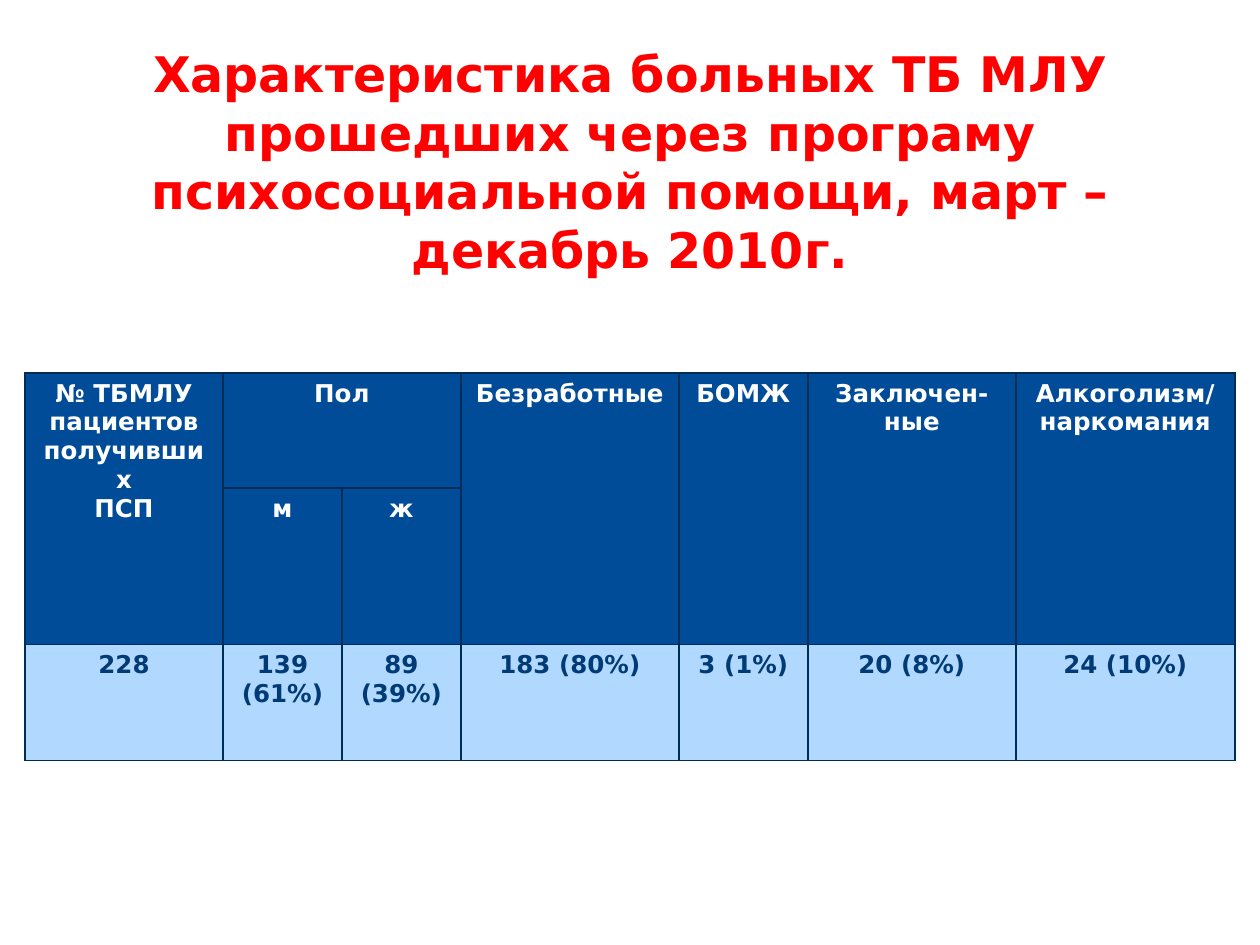
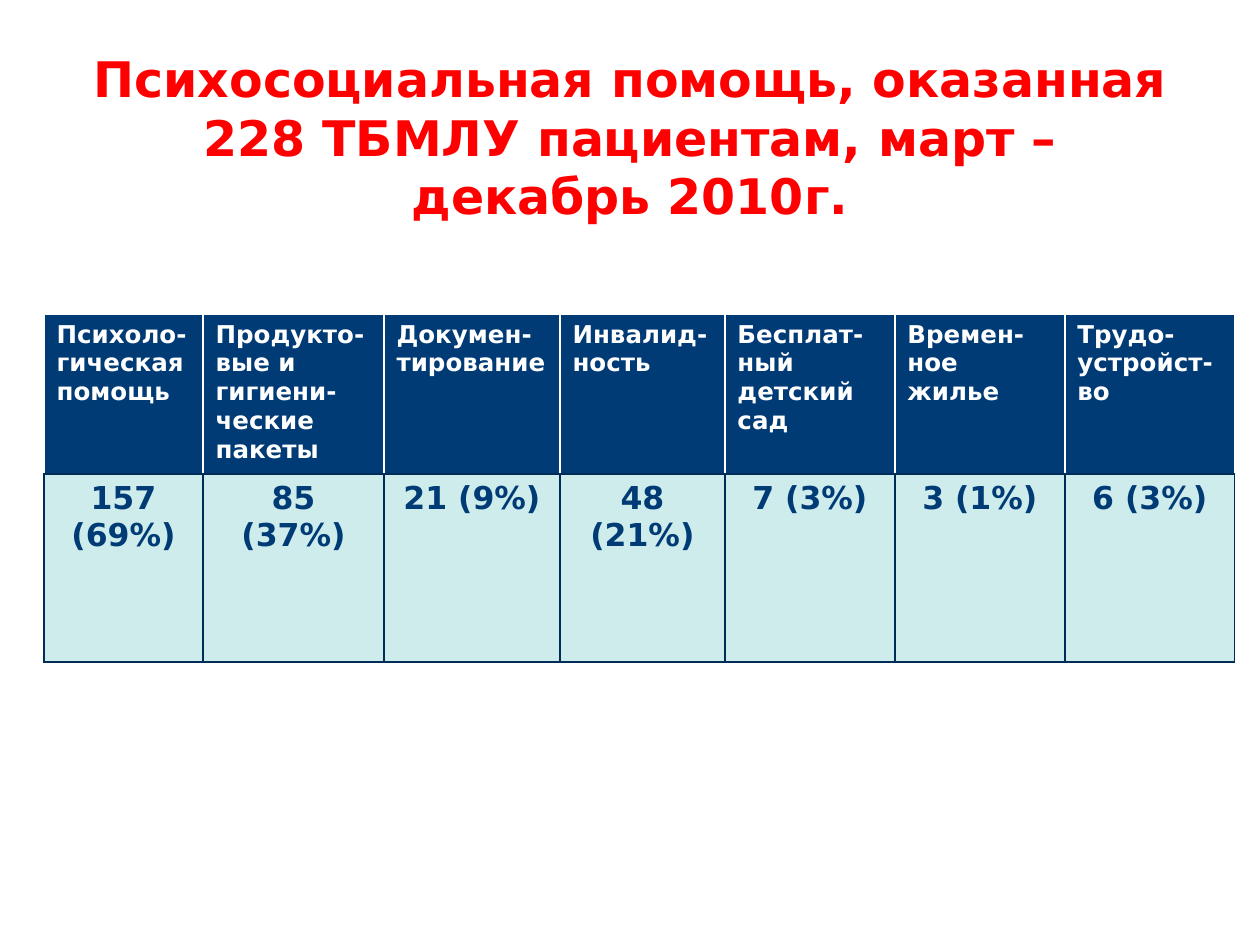
"""Build two slides with tables on psychosocial help for TB patients."""
from dataclasses import dataclass
from typing import NamedTuple

from lxml import etree
from pptx import Presentation
from pptx import util as u
from pptx.dml.color import RGBColor
from pptx.enum import text as tx
from pptx.oxml import ns

FONT = "DejaVu Sans"
RED = RGBColor(0xFF, 0x00, 0x00)
WHITE = RGBColor(0xFF, 0xFF, 0xFF)
NAVY = RGBColor(0x00, 0x3B, 0x76)
BLUE = RGBColor(0x00, 0x4C, 0x99)
SKY = RGBColor(0xB1, 0xD8, 0xFF)
MINT = RGBColor(0xCE, 0xEC, 0xEC)
EDGE = RGBColor(0x00, 0x2C, 0x58)
MID = tx.PP_ALIGN.CENTER
LEFT = tx.PP_ALIGN.LEFT
SIDES = ("lnL", "lnR", "lnT", "lnB")


class Look(NamedTuple):
    """Style of the cells in one row."""
    fill: RGBColor
    ink: RGBColor
    size: int
    align: tx.PP_ALIGN
    edges: tuple[RGBColor, ...]


class Span(NamedTuple):
    """First and last cell of a merged block."""
    row: int
    col: int
    last_row: int
    last_col: int


@dataclass
class Grid:
    """One slide: its title and its table."""
    title: str
    tall: int
    left: int
    top: int
    cols: list[int]
    rows: list[int]
    looks: list[Look]
    cells: list[list[str]]
    spans: list[Span]


DARK = (EDGE,) * 4
PALE = (WHITE, WHITE, WHITE, EDGE)
HEAD = Look(BLUE, WHITE, 14, MID, DARK)

GRIDS = [
    Grid(
        "Характеристика больных ТБ МЛУ прошедших через програму "
        "психосоциальной помощи, март – декабрь 2010г.",
        246, 25, 373,
        [198, 119, 119, 218, 129, 208, 219],
        [115, 97, 116],
        [HEAD, HEAD, Look(SKY, NAVY, 14, MID, DARK)],
        [
            ["№ ТБМЛУ пациентов получивших\nПСП", "Пол", "", "Безработные",
             "БОМЖ", "Заключен- ные", "Алкоголизм/\nнаркомания"],
            ["", "м", "ж", "", "", "", ""],
            ["228", "139 (61%)", "89 (39%)", "183 (80%)",
             "3 (1%)", "20 (8%)", "24 (10%)"],
        ],
        [Span(0, 1, 0, 2)] + [Span(0, c, 1, c) for c in (0, 3, 4, 5, 6)],
    ),
    Grid(
        "Психосоциальная помощь, оказанная 228 ТБМЛУ пациентам, "
        "март – декабрь 2010г.",
        197, 44, 314,
        [159, 181, 176, 165, 170, 170, 170],
        [160, 188],
        [Look(NAVY, WHITE, 14, LEFT, PALE), Look(MINT, NAVY, 18, MID, DARK)],
        [
            ["Психоло-гическая помощь", "Продукто-вые и гигиени-ческие пакеты",
             "Докумен-тирование", "Инвалид-ность", "Бесплат-ный детский сад",
             "Времен-ное жилье", "Трудо-устройст-во"],
            ["157 (69%)", "85 (37%)", "21 (9%)", "48 (21%)",
             "7 (3%)", "3 (1%)", "6 (3%)"],
        ],
        [],
    ),
]


def px(num: int) -> u.Emu:
    """Turn px into EMU."""
    return u.Emu(round(num * 914400 / 126))


def write(frame, words: str, size: int, ink: RGBColor, align) -> None:
    """Put bold text into a frame."""
    frame.text = words
    for para in frame.paragraphs:
        para.alignment = align
        for run in para.runs:
            font = run.font
            font.name, font.size, font.bold = FONT, u.Pt(size), True
            font.color.rgb = ink


def rule(cell, edges: tuple[RGBColor, ...]) -> None:
    """Draw the four borders of a cell."""
    props = cell._tc.get_or_add_tcPr()
    for side, ink in zip(SIDES, edges):
        line = etree.SubElement(props, ns.qn(f"a:{side}"), w=str(u.Pt(1)))
        fill = etree.SubElement(line, ns.qn("a:solidFill"))
        etree.SubElement(fill, ns.qn("a:srgbClr"), val=str(ink))


def add_title(slide, grid: Grid) -> None:
    """Place and fill the title."""
    title = slide.shapes.title
    title.left, title.top = px(63), px(38)
    title.width, title.height = px(1134), px(grid.tall)
    frame = title.text_frame
    frame.word_wrap = True
    frame.auto_size = tx.MSO_AUTO_SIZE.NONE
    frame.vertical_anchor = tx.MSO_ANCHOR.MIDDLE
    write(frame, grid.title, 28, RED, MID)


def add_grid(slide, grid: Grid) -> None:
    """Draw the table."""
    table = slide.shapes.add_table(
        len(grid.rows), len(grid.cols), px(grid.left), px(grid.top),
        px(sum(grid.cols)), px(sum(grid.rows))).table
    table.horz_banding = False
    for col, wide in zip(table.columns, grid.cols):
        col.width = px(wide)
    for row, tall in zip(table.rows, grid.rows):
        row.height = px(tall)
    for span in grid.spans:
        table.cell(span.row, span.col).merge(
            table.cell(span.last_row, span.last_col))
    for row, look, words in zip(table.rows, grid.looks, grid.cells):
        for cell, word in zip(row.cells, words):
            rule(cell, look.edges)
            cell.fill.solid()
            cell.fill.fore_color.rgb = look.fill
            if word:
                write(cell.text_frame, word, look.size, look.ink, look.align)


def main() -> None:
    """Build and save the deck."""
    deck = Presentation()
    deck.slide_width, deck.slide_height = px(1260), px(945)
    for grid in GRIDS:
        slide = deck.slides.add_slide(deck.slide_layouts[5])
        add_title(slide, grid)
        add_grid(slide, grid)
    deck.save("out.pptx")


if __name__ == "__main__":
    main()
